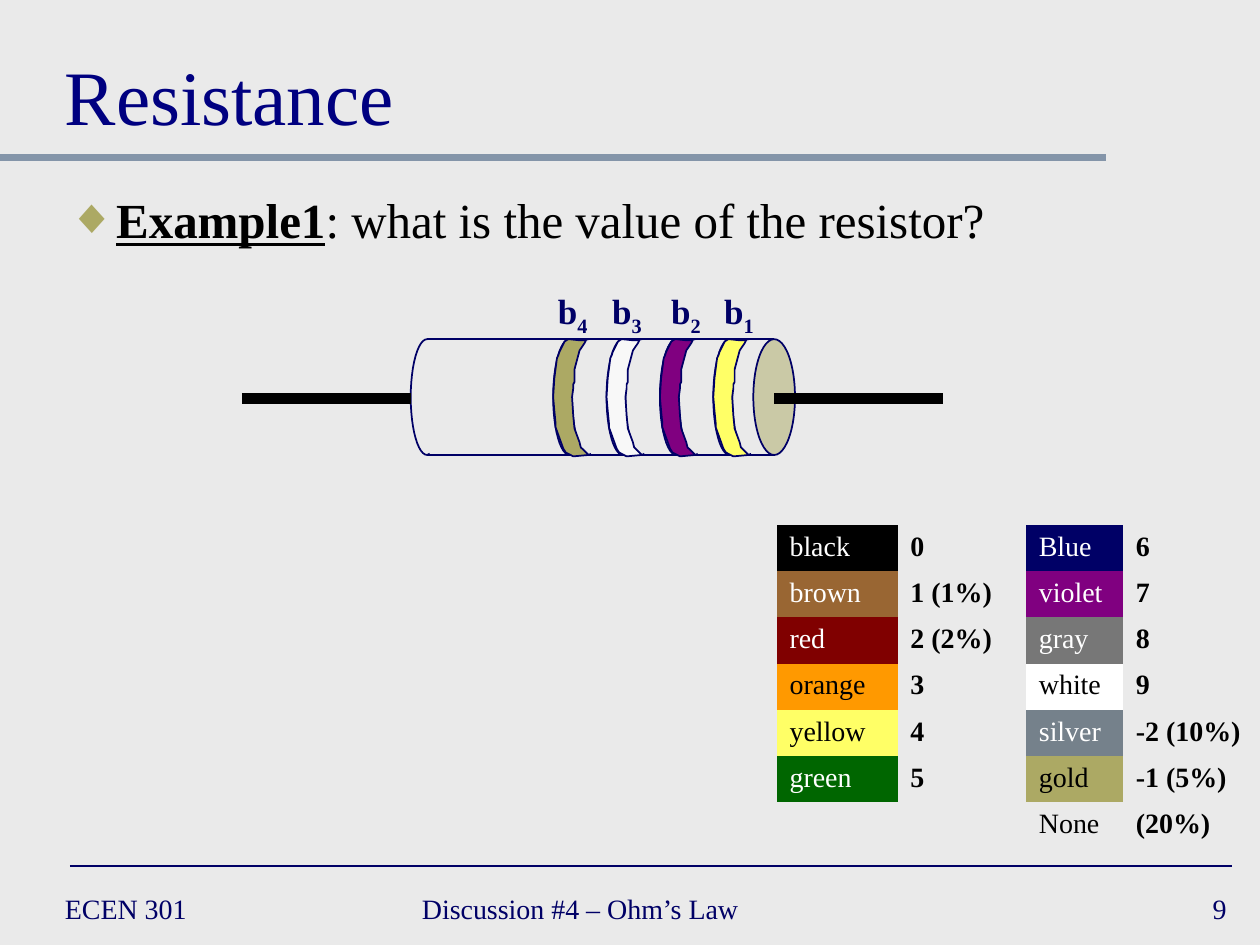
import math
import pptx
import pptx.util
import pptx.dml.color
import pptx.enum.shapes
import pptx.enum.text
from lxml import etree
from pptx.oxml.ns import qn

Pt = pptx.util.Pt
Kind = pptx.enum.shapes.MSO_SHAPE
Wire = pptx.enum.shapes.MSO_CONNECTOR
Align = pptx.enum.text.PP_ALIGN
Anchor = pptx.enum.text.MSO_ANCHOR

HUES = {
    "page": "EAEAEA", "bar": "8495A9", "navy": "000066", "title": "000080",
    "black": "000000", "white": "FFFFFF", "brown": "996633", "red": "800000",
    "orange": "FF9900", "yellow": "FFFF66", "green": "006600",
    "violet": "800080", "gray": "777777", "silver": "75818B",
    "gold": "ACA964", "pale": "F8F8F8",
}
BASE = {"name": "Times New Roman", "bold": False, "underline": False}
CODES = [
    ("black", "white", "0", "Blue", "navy", "white", "6"),
    ("brown", "white", "1 (1%)", "violet", "violet", "white", "7"),
    ("red", "white", "2 (2%)", "gray", "gray", "white", "8"),
    ("orange", "black", "3", "white", "white", "black", "9"),
    ("yellow", "black", "4", "silver", "silver", "white", "-2 (10%)"),
    ("green", "white", "5", "gold", "gold", "black", "-1 (5%)"),
    ("", "black", "", "None", None, "black", "(20%)"),
]
BANDS = [("4", "gold", 172.8), ("3", "pale", 203.8), ("2", "violet", 237.6), ("1", "yellow", 267.9)]
EDGE = [
    (8.6, 0), (6.5, 1.4), (3.6, 7.2), (2.9, 9.4), (2.2, 10.8), (0.7, 22.3),
    (0, 33.1), (0.7, 41), (1.4, 48.2), (1.4, 50.4), (5.8, 62.6), (7.2, 64.8),
    (11.5, 67), (20.2, 66.2), (16.6, 62.6), (15.8, 61.9), (15.1, 59),
    (13, 53.3), (12.2, 51.1), (11.5, 43.9), (10.8, 33.1), (11.5, 28.1),
    (11.5, 25.9), (12.2, 24.5), (12.2, 17.3), (15.1, 6.5), (18, 2.2),
    (18.7, 0.7), (15.1, 0.7),
]


def hue(name):
    return pptx.dml.color.RGBColor.from_string(HUES[name])


def write(para, text, tint, **form):
    run = para.add_run()
    run.text = text
    for key, val in {**BASE, **form}.items():
        setattr(run.font, key, val)
    run.font.color.rgb = hue(tint)
    return run


def label(shapes, box, anchor=Anchor.TOP, align=Align.LEFT, wrap=True):
    frame = shapes.add_textbox(*map(Pt, box)).text_frame
    form = {"word_wrap": wrap, "vertical_anchor": anchor}
    for key, val in form.items():
        setattr(frame, key, val)
    para = frame.paragraphs[0]
    para.alignment = align
    return para


def rule(shapes, start, end, tint, width):
    line = shapes.add_connector(Wire.STRAIGHT, *map(Pt, (*start, *end)))
    line.line.color.rgb = hue(tint)
    line.line.width = Pt(width)
    etree.SubElement(line._element.spPr, qn("a:effectLst"))


def paint(shape, fill=None):
    shape.shadow.inherit = False
    if fill:
        shape.fill.solid()
        shape.fill.fore_color.rgb = hue(fill)
    else:
        shape.fill.background()
    shape.line.color.rgb = hue("navy")
    shape.line.width = Pt(1)


def trace(shapes, left, top, dots, fill=None):
    spots = [(Pt(left + x), Pt(top + y)) for x, y in dots]
    path = shapes.build_freeform(*spots[0], scale=1.0)
    path.add_line_segments(spots[1:], close=bool(fill))
    paint(path.convert_to_shape(), fill)


def heading(slide, box):
    left, top, width, height = box
    para = label(slide.shapes, (left + 30, top + 12, 660, 72), Anchor.BOTTOM)
    write(para, "Resistance", "title", size=Pt(44))
    base = top + height
    rule(slide.shapes, (left, base), (left + width, base), "bar", 4)


def prompt(slide, box):
    para = label(slide.shapes, box)
    props = para._p.get_or_add_pPr()
    props.set("marL", str(Pt(27)))
    props.set("indent", str(-Pt(27)))
    tone = etree.SubElement(props, qn("a:buClr"))
    etree.SubElement(tone, qn("a:srgbClr"), val=HUES["gold"])
    etree.SubElement(props, qn("a:buFont"), typeface="Times New Roman")
    etree.SubElement(props, qn("a:buChar"), char="◆")
    write(para, "Example1", "black", size=Pt(28), bold=True, underline=True)
    write(para, ": what is the value of the resistor?", "black", size=Pt(28))


def resistor(slide, box):
    left, top, width, height = box
    shapes = slide.shapes.add_group_shape().shapes
    tall, deep = 66.2, 23.8
    head = top + height - tall
    foot, mid = head + tall, head + tall / 2 + 0.7
    tube, cap = left + 96.5, left + 292.3
    core = cap + deep / 2
    turns = [math.pi * step / 24 for step in range(25)]
    arc = [(9.4 * (1 - math.sin(t)), tall / 2 * (1 - math.cos(t))) for t in turns]
    arc.append((10.8, tall - 0.7))

    end = shapes.add_shape(Kind.OVAL, *map(Pt, (cap, head, deep, tall)))
    paint(end, "gold")
    tone = end._element.spPr.find(qn("a:solidFill"))[0]
    etree.SubElement(tone, qn("a:alpha"), val="50000")
    for y in (foot, head):
        rule(shapes, (core, y), (tube + 9.4, y), "navy", 1)
    trace(shapes, tube, head, arc)
    for rank, (digit, fill, spot) in enumerate(BANDS):
        start = left + 177.9 + 30.5 * rank
        for shift in (0, 10.8):
            trace(shapes, start + shift, head, arc)
        trace(shapes, start, head, EDGE, fill)
        para = label(shapes, (left + spot, top, 32.4, 31), align=Align.CENTER, wrap=False)
        write(para, "b", "navy", size=Pt(20), bold=True)
        run = write(para, digit, "navy", size=Pt(20), bold=True)
        run._r.get_or_add_rPr().set("baseline", "-25000")
    rule(shapes, (core, mid), (left + width, mid), "black", 6)
    rule(shapes, (left, mid), (tube, mid), "black", 6)


def codes(slide, box):
    frame = slide.shapes.add_table(len(CODES), 4, *map(Pt, box))
    table = frame.table
    table.first_row = table.horz_banding = False
    style = table._tbl.tblPr.find(qn("a:tableStyleId"))
    style.text = "{2D5ABB26-0587-4C30-8999-92F81FD0307C}"
    for col, width in zip(table.columns, (69.1, 73.4, 55.4, 77.8)):
        col.width = Pt(width)
    for row, (name, ink, num, twin, fill, tint, mark) in enumerate(CODES):
        table.rows[row].height = Pt(box[3] / len(CODES))
        parts = [
            (name, name, ink, False), (num, None, "black", True),
            (twin, fill, tint, False), (mark, None, "black", True),
        ]
        for col, (text, back, tone, bold) in enumerate(parts):
            cell = table.cell(row, col)
            if back:
                cell.fill.solid()
                cell.fill.fore_color.rgb = hue(back)
            else:
                cell.fill.background()
            if text:
                write(cell.text_frame.paragraphs[0], text, tone, size=Pt(16), bold=bold)


def footer(slide, box):
    left, top, width, height = box
    rule(slide.shapes, (left + 10, top), (left + width, top), "navy", 1)
    parts = [
        ("ECEN 301", 0, 156, Align.LEFT),
        ("Discussion #4 – Ohm’s Law", 204, 276, Align.LEFT),
        ("9", 528, 150, Align.RIGHT),
    ]
    for text, shift, span, align in parts:
        spot = (left + shift, top + height - 30, span, 30)
        para = label(slide.shapes, spot, Anchor.MIDDLE, align)
        write(para, text, "navy", size=Pt(16))


def main():
    deck = pptx.Presentation()
    deck.slide_width, deck.slide_height = Pt(720), Pt(540)
    slide = deck.slides.add_slide(deck.slide_layouts[6])
    slide.background.fill.solid()
    slide.background.fill.fore_color.rgb = hue("page")
    heading(slide, (0, 0, 632, 90))
    footer(slide, (30, 495, 674, 39))
    prompt(slide, (31.5, 105, 658, 57))
    resistor(slide, (138.2, 162, 400.4, 98))
    codes(slide, (444, 300, 275.7, 185))
    deck.save("out.pptx")


if __name__ == "__main__":
    main()
